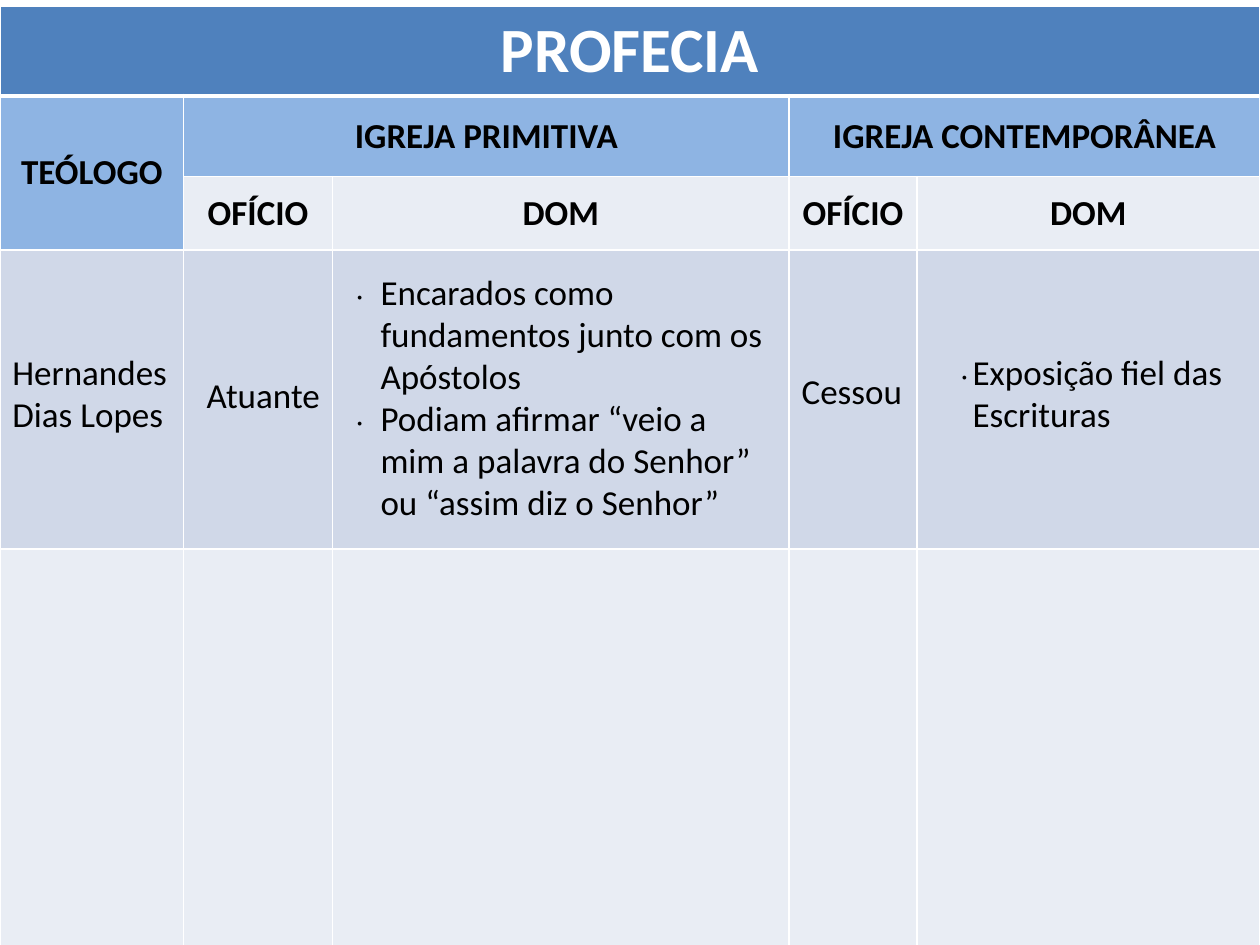
from pptx import Presentation
from pptx.dml.color import RGBColor
from pptx.enum import text as t
from pptx.oxml import parse_xml
from pptx.oxml.ns import nsdecls
from pptx.util import Pt

WHITE = RGBColor(0xFF, 0xFF, 0xFF)
BLACK = RGBColor(0x00, 0x00, 0x00)
BLUE = RGBColor(0x4F, 0x81, 0xBD)
SKY = RGBColor(0x8E, 0xB4, 0xE3)
PALE = RGBColor(0xE9, 0xED, 0xF4)
MIST = RGBColor(0xD0, 0xD8, 0xE8)

COLS = [105, 85, 261, 73, 196]
ROWS = [49, 46, 42, 171, 229]
FILLS = [BLUE, SKY, PALE, MIST, PALE]
HEADS = [
    (0, 0, "PROFECIA"),
    (1, 0, "TEÓLOGO"),
    (1, 1, "IGREJA PRIMITIVA"),
    (1, 3, "IGREJA CONTEMPORÂNEA"),
    (2, 1, "OFÍCIO"),
    (2, 2, "DOM"),
    (2, 3, "OFÍCIO"),
    (2, 4, "DOM"),
]
SPANS = [(0, 0, 0, 4), (1, 0, 2, 0), (1, 1, 1, 2), (1, 3, 1, 4)]
NOTES = [
    ((0, 196.5, 105, 55.5), 0, ["Hernandes Dias Lopes"]),
    ((111, 210, 80, 31.5), 0, ["Atuante"]),
    ((196, 151, 255, 174), 14.4, [
        "Encarados como fundamentos junto com os Apóstolos",
        "Podiam afirmar “veio a mim a palavra do Senhor” ou “assim diz o Senhor”",
    ]),
    ((451, 207.5, 73.5, 31.5), 0, ["Cessou"]),
    ((541.5, 196.5, 178.5, 55.5), 7.2, ["Exposição fiel das Escrituras"]),
]


def add_run(para, words, size=20, color=BLACK, bold=False):
    """Add one formatted run to a paragraph."""
    run = para.add_run()
    run.text = words
    font = run.font
    font.name, font.size, font.bold = "Calibri", Pt(size), bold
    font.color.rgb = color


def add_edge(cell, side, width):
    """Give one side of a cell a white border."""
    cell._tc.get_or_add_tcPr().append(parse_xml(
        f'<a:ln{side} {nsdecls("a")} w="{Pt(width)}"><a:solidFill>'
        f'<a:srgbClr val="{WHITE}"/></a:solidFill></a:ln{side}>'))


def add_grid(slide, box):
    """Place the table with its merged headings."""
    frame = slide.shapes.add_table(len(ROWS), len(COLS), *map(Pt, box))
    grid = frame.table
    for col, width in zip(grid.columns, COLS):
        col.width = Pt(width)
    for r, (row, high) in enumerate(zip(grid.rows, ROWS)):
        row.height = Pt(high)
        for c, cell in enumerate(row.cells):
            for side in "LRTB":
                thick = (r, side) in [(0, "B"), (1, "T")]
                add_edge(cell, side, 3 if thick else 1)
            cell.fill.solid()
            cell.fill.fore_color.rgb = SKY if (r, c) == (2, 0) else FILLS[r]
            cell.vertical_anchor = t.MSO_ANCHOR.MIDDLE
    for top, left, low, right in SPANS:
        grid.cell(top, left).merge(grid.cell(low, right))
    for r, c, words in HEADS:
        para = grid.cell(r, c).text_frame.paragraphs[0]
        para.alignment = t.PP_ALIGN.CENTER
        size, color = (36, WHITE) if r == 0 else (20, BLACK)
        add_run(para, words, size, color, True)


def add_note(slide, box, hang, lines):
    """Place a text box, with dot bullets where it has a hanging indent."""
    frame = slide.shapes.add_textbox(*map(Pt, box)).text_frame
    frame.word_wrap = True
    for i, words in enumerate(lines):
        para = frame.add_paragraph() if i else frame.paragraphs[0]
        if hang:
            props = para._p.get_or_add_pPr()
            props.set("marL", str(Pt(hang)))
            props.set("indent", str(-Pt(hang)))
            props.append(parse_xml(f'<a:buChar {nsdecls("a")} char="."/>'))
        add_run(para, words)


def main():
    """Build and save the slide."""
    deck = Presentation()
    deck.slide_width, deck.slide_height = Pt(720), Pt(540)
    slide = deck.slides.add_slide(deck.slide_layouts[6])
    add_grid(slide, (0, 3.6, sum(COLS), sum(ROWS)))
    for note in NOTES:
        add_note(slide, *note)
    deck.save("out.pptx")


if __name__ == "__main__":
    main()
